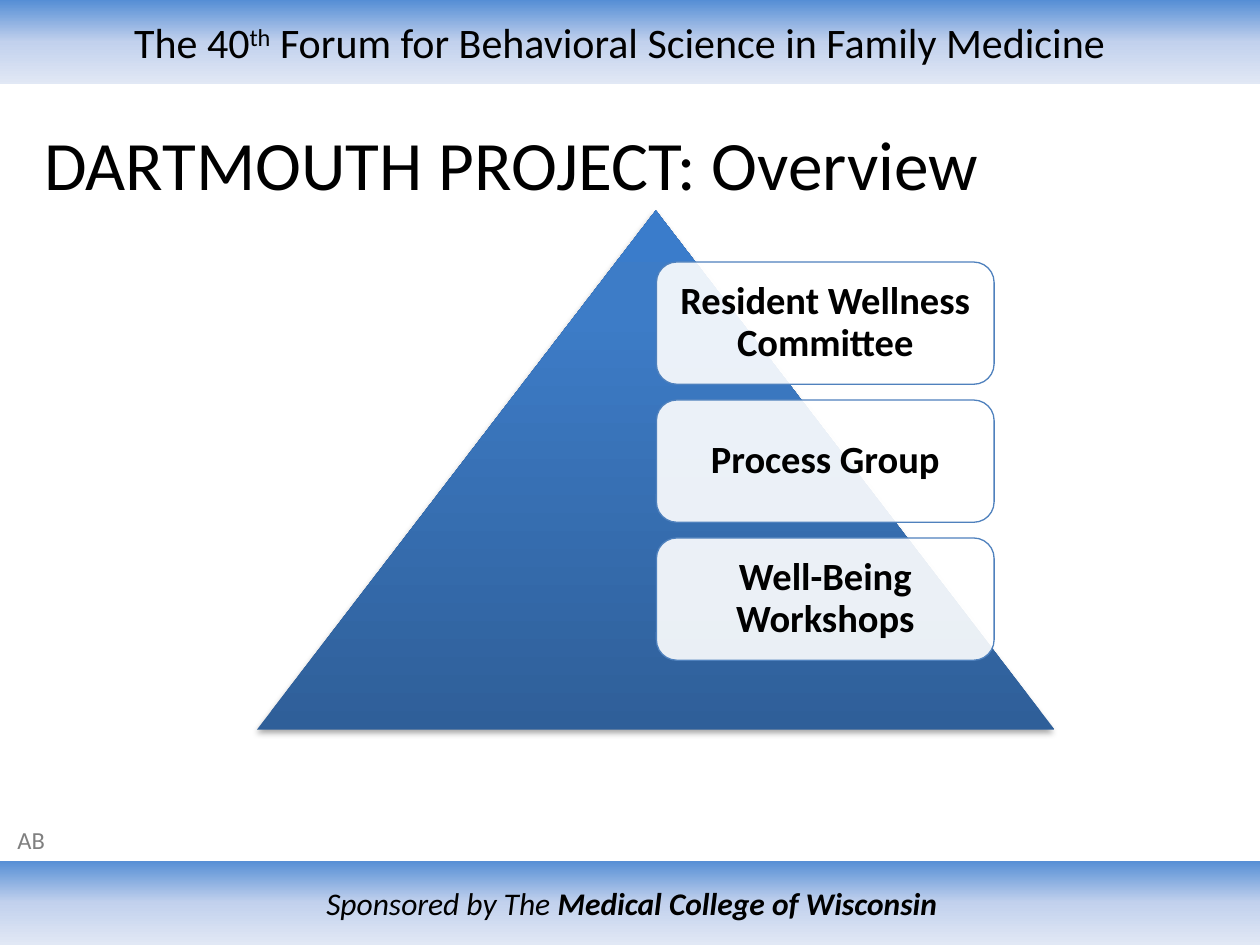
from lxml import etree
from pptx import Presentation
from pptx.dml.color import RGBColor
from pptx.enum.shapes import MSO_SHAPE
from pptx.enum.text import MSO_ANCHOR, MSO_AUTO_SIZE, PP_ALIGN
from pptx.oxml.ns import qn
from pptx.util import Inches, Pt

BLACK = RGBColor(0x00, 0x00, 0x00)
GRAY = RGBColor(0x80, 0x80, 0x80)
WHITE = RGBColor(0xFF, 0xFF, 0xFF)
BLUE = RGBColor(0x4F, 0x81, 0xBD)
BAND_STOPS = [
    (0, RGBColor(0x55, 0x8E, 0xD5)),
    (50, RGBColor(0xC2, 0xD1, 0xED)),
    (100, RGBColor(0xE1, 0xE8, 0xF5)),
]
PYRAMID_STOPS = [
    (0, RGBColor(0x2F, 0x5F, 0x99)),
    (80, RGBColor(0x3D, 0x7C, 0xC7)),
    (100, RGBColor(0x3A, 0x7C, 0xCB)),
]
LEFT, CENTER = PP_ALIGN.LEFT, PP_ALIGN.CENTER
TOP, MIDDLE = MSO_ANCHOR.TOP, MSO_ANCHOR.MIDDLE
RECTANGLE = MSO_SHAPE.RECTANGLE
TRIANGLE = MSO_SHAPE.ISOSCELES_TRIANGLE
ROUNDED = MSO_SHAPE.ROUNDED_RECTANGLE
TITLE_ONLY = 5

STEPS = ["Resident Wellness Committee", "Process Group", "Well-Being Workshops"]
STEP_TOP, STEP_PITCH = 2.08, 1.095


def add_child(parent, tag, **attributes):
    child = etree.SubElement(parent, qn(tag))
    for name, value in attributes.items():
        child.set(name, str(value))
    return child


def write_text(shape, *runs, size, color=BLACK, align=CENTER, anchor=MIDDLE,
               wrap=True, line_spacing=None):
    """Write one paragraph from (text, style) runs; style is a set of names."""
    frame = shape.text_frame
    frame.word_wrap = wrap
    frame.vertical_anchor = anchor
    para = frame.paragraphs[0]
    para.alignment = align
    para.line_spacing = line_spacing
    for text, style in runs:
        span = para.add_run()
        span.text = text
        font = span.font
        font.name, font.size = "Calibri", Pt(size)
        font.color.rgb = color
        font.bold = "bold" in style
        font.italic = "italic" in style
        if "superscript" in style:
            span._r.get_or_add_rPr().set("baseline", "30000")


def add_plain_shape(page, kind, left, top, width, height):
    shape = page.shapes.add_shape(
        kind, Inches(left), Inches(top), Inches(width), Inches(height))
    shape.shadow.inherit = False
    shape.line.fill.background()
    return shape


def fill_gradient(shape, stops, angle):
    """Fill with (percent, colour) stops; the angle runs clockwise."""
    shape.fill.gradient()
    gradient = shape._element.spPr.find(qn("a:gradFill"))
    for child in list(gradient):
        gradient.remove(child)
    stop_list = add_child(gradient, "a:gsLst")
    for percent, color in stops:
        stop = add_child(stop_list, "a:gs", pos=percent * 1000)
        add_child(stop, "a:srgbClr", val=color)
    add_child(gradient, "a:lin", ang=angle * 60000, scaled=0)


def add_band(page, top, width):
    band = add_plain_shape(page, RECTANGLE, 0, top, width, 0.67)
    fill_gradient(band, BAND_STOPS, 90)
    return band


def add_pyramid(page):
    pyramid = add_plain_shape(page, TRIANGLE, 2.04, 1.67, 6.33, 4.12)
    fill_gradient(pyramid, PYRAMID_STOPS, 270)
    effects = pyramid._element.spPr.find(qn("a:effectLst"))
    shadow = add_child(effects, "a:outerShdw", blurRad=Pt(3.1), dist=Pt(1.8),
                       dir=90 * 60000, rotWithShape=0)
    color = add_child(shadow, "a:srgbClr", val=BLACK)
    add_child(color, "a:alpha", val=35000)


def add_step(page, text, top):
    step = add_plain_shape(page, ROUNDED, 5.21, top, 2.68, 0.97)
    step.fill.solid()
    step.fill.fore_color.rgb = WHITE
    color = step._element.spPr.find(qn("a:solidFill")).find(qn("a:srgbClr"))
    add_child(color, "a:alpha", val=90000)
    step.line.color.rgb = BLUE
    step.line.width = Pt(0.75)
    frame = step.text_frame
    frame.margin_left = frame.margin_right = Inches(0.14)
    write_text(step, (text, {"bold"}), size=22, line_spacing=0.9)


def add_title(page, text):
    title = page.shapes.title
    title.left, title.top = Inches(0.25), Inches(0.92)
    title.width, title.height = Inches(9), Inches(0.75)
    title.text_frame.auto_size = MSO_AUTO_SIZE.NONE
    write_text(title, (text, set()), size=39.6, align=LEFT)


def add_initials(page, text):
    box = page.shapes.add_textbox(
        Inches(0.04), Inches(6.5), Inches(0.54), Inches(0.34))
    write_text(box, (text, set()), size=14, color=GRAY, align=LEFT,
               anchor=TOP, wrap=False)


def main():
    deck = Presentation()
    deck.slide_width, deck.slide_height = Inches(10), Inches(7.5)
    page = deck.slides.add_slide(deck.slide_layouts[TITLE_ONLY])

    header = add_band(page, 0, 10)
    header.text_frame.margin_right = Inches(0.26)
    write_text(header, ("The 40", set()), ("th", {"superscript"}),
               (" Forum for Behavioral Science in Family Medicine", set()),
               size=24)
    footer = add_band(page, 6.83, 10.03)
    write_text(footer, ("Sponsored by The ", {"italic"}),
               ("Medical College of Wisconsin", {"bold", "italic"}), size=18)

    add_pyramid(page)
    for index, text in enumerate(STEPS):
        add_step(page, text, STEP_TOP + index * STEP_PITCH)
    add_title(page, "DARTMOUTH PROJECT: Overview")
    add_initials(page, "AB")
    deck.save("out.pptx")


if __name__ == "__main__":
    main()
